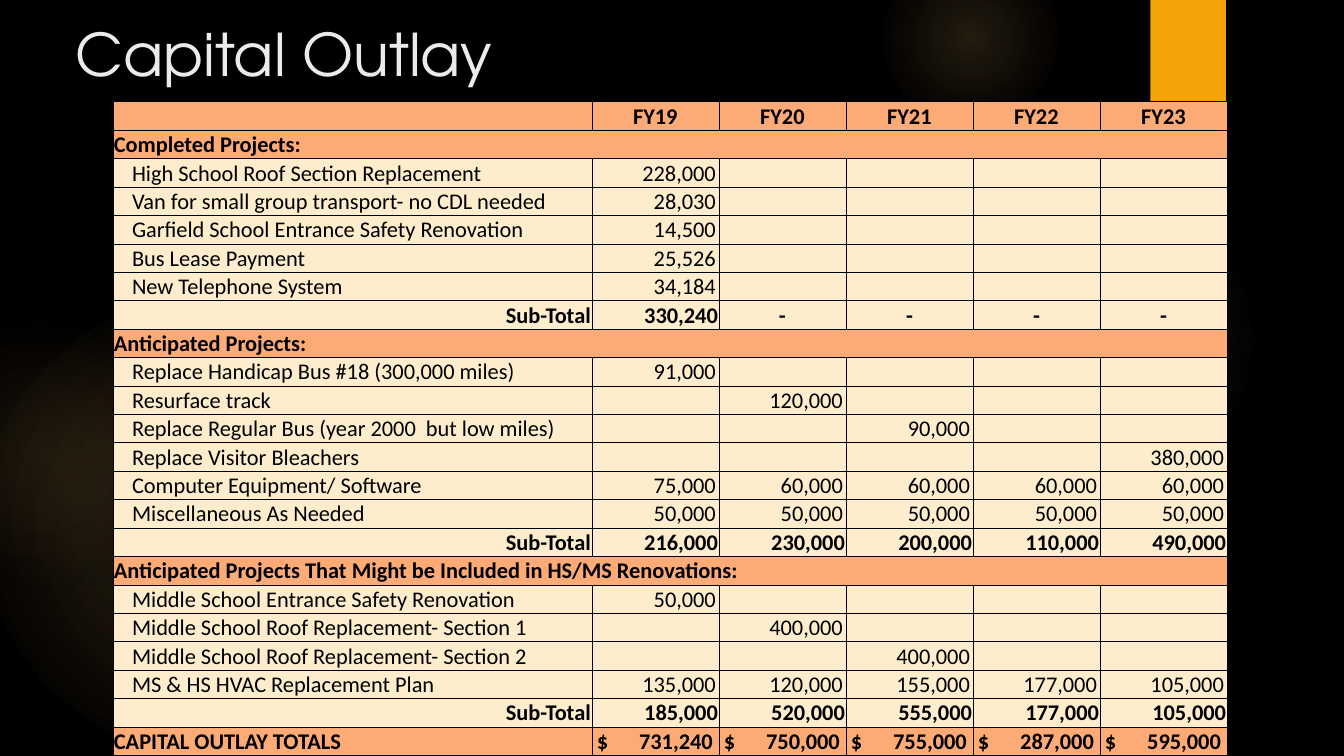
from lxml import etree
from pptx import Presentation
from pptx.dml.color import RGBColor
from pptx.enum.shapes import MSO_SHAPE
from pptx.enum.text import MSO_ANCHOR, PP_ALIGN
from pptx.oxml import parse_xml
from pptx.oxml.ns import nsdecls, qn
from pptx.util import Inches, Pt

OVAL, RECTANGLE = MSO_SHAPE.OVAL, MSO_SHAPE.RECTANGLE
LEFT, CENTER, RIGHT = PP_ALIGN.LEFT, PP_ALIGN.CENTER, PP_ALIGN.RIGHT
TOP, BOTTOM = MSO_ANCHOR.TOP, MSO_ANCHOR.BOTTOM

BLACK, ACCENT, TITLE_COLOR = "000000", "F5A408", "EBEBEB"
BAND, BODY = "FCAB76", "FDEDCD"
GLOW, WARM_GLOW = "FAC96A", "F59B74"
YEARS = ["FY19", "FY20", "FY21", "FY22", "FY23"]

GLOWS = [
    (-0.17, 2.92, 4.58, [(0, GLOW, 11), (36, GLOW, 10), (75, GLOW, 0)]),
    (-0.92, 3.17, 2.58, [(0, GLOW, 8), (36, GLOW, 5), (71, WARM_GLOW, 0)]),
    (9.41, 1.83, 3.08, [(0, GLOW, 7), (36, GLOW, 6), (69, GLOW, 0)]),
    (8.75, -0.5, 1.75, [(0, GLOW, 14), (36, GLOW, 7), (73, GLOW, 0)]),
    (9.41, 6.67, 1.08, [(0, GLOW, 10), (31, GLOW, 5), (66, GLOW, 0)]),
]

OUTLAY = [
    ("header", "", YEARS),
    ("section", "Completed Projects:", []),
    ("item", "High School Roof Section Replacement", ["228,000"]),
    ("item", "Van for small group transport- no CDL needed", ["28,030"]),
    ("item", "Garfield School Entrance Safety Renovation", ["14,500"]),
    ("item", "Bus Lease Payment", ["25,526"]),
    ("item", "New Telephone System", ["34,184"]),
    ("subtotal", "Sub-Total", ["330,240", "-", "-", "-", "-"]),
    ("section", "Anticipated Projects:", []),
    ("item", "Replace Handicap Bus #18 (300,000 miles)", ["91,000"]),
    ("item", "Resurface track", ["", "120,000"]),
    ("item", "Replace Regular Bus (year 2000  but low miles)", ["", "", "90,000"]),
    ("item", "Replace Visitor Bleachers", ["", "", "", "", "380,000"]),
    ("item", "Computer Equipment/ Software", ["75,000"] + ["60,000"] * 4),
    ("item", "Miscellaneous As Needed", ["50,000"] * 5),
    ("subtotal", "Sub-Total", ["216,000", "230,000", "200,000", "110,000", "490,000"]),
    ("section", "Anticipated Projects That Might be Included in HS/MS Renovations:", []),
    ("item", "Middle School Entrance Safety Renovation", ["50,000"]),
    ("item", "Middle School Roof Replacement- Section 1", ["", "400,000"]),
    ("item", "Middle School Roof Replacement- Section 2", ["", "", "400,000"]),
    ("item", "MS & HS HVAC Replacement Plan",
     ["135,000", "120,000", "155,000", "177,000", "105,000"]),
    ("subtotal", "Sub-Total", ["185,000", "520,000", "555,000", "177,000", "105,000"]),
    ("total", "CAPITAL OUTLAY TOTALS",
     ["731,240", "750,000", "755,000", "287,000", "595,000"]),
]


def rgb(color):
    """Turn a hex string into a colour."""
    return RGBColor.from_string(color)


def write(frame, text, font="Calibri", size=16, color=BLACK, bold=False, align=LEFT, tab=None):
    """Write one formatted paragraph into a text frame."""
    paragraph = frame.paragraphs[0]
    paragraph.alignment = align
    if tab is not None:
        properties = paragraph._p.get_or_add_pPr()
        stops = etree.SubElement(properties, qn("a:tabLst"))
        etree.SubElement(stops, qn("a:tab"), pos=str(Inches(tab)), algn="r")
    if not text:
        etree.SubElement(paragraph._p, qn("a:endParaRPr"), sz=str(size * 100))
        return
    run = paragraph.add_run()
    run.text = text
    run.font.name = font
    run.font.size = Pt(size)
    run.font.bold = bold
    run.font.color.rgb = rgb(color)


def add_glow(slide, left, top, diameter, stops):
    """Add a circle that fades out from its centre."""
    glow = slide.shapes.add_shape(
        OVAL, Inches(left), Inches(top), Inches(diameter), Inches(diameter))
    glow.shadow.inherit = False
    glow.line.fill.background()
    stop_xml = "".join(
        f'<a:gs pos="{position * 1000}"><a:srgbClr val="{color}">'
        f'<a:alpha val="{opacity * 1000}"/></a:srgbClr></a:gs>'
        for position, color, opacity in stops)
    gradient = parse_xml(
        f'<a:gradFill {nsdecls("a")}><a:gsLst>{stop_xml}</a:gsLst><a:path path="circle">'
        '<a:fillToRect l="50000" t="50000" r="50000" b="50000"/></a:path></a:gradFill>')
    glow._element.spPr.find(qn("a:prstGeom")).addnext(gradient)


def add_accent(slide):
    """Add the accent block at the upper edge."""
    accent = slide.shapes.add_shape(
        RECTANGLE, Inches(11.41), Inches(0), Inches(0.75), Inches(1.25))
    accent.shadow.inherit = False
    accent.fill.solid()
    accent.fill.fore_color.rgb = rgb(ACCENT)
    accent.line.fill.background()


def place_title(slide, text):
    """Move the title placeholder in front of the decoration and fill it."""
    title = slide.shapes.title
    slide.shapes._spTree.append(title._element)
    title.left, title.top = Inches(0.65), Inches(0.13)
    title.width, title.height = Inches(10.29), Inches(1)
    title.text_frame.vertical_anchor = TOP
    write(title.text_frame, text, font="TeX Gyre Adventor", size=42, color=TITLE_COLOR)


def style_cell(cell, fill, left=0.01, right=0.01):
    """Give a cell its borders, fill and insets."""
    properties = cell._tc.get_or_add_tcPr()
    for side in ("lnL", "lnR", "lnT", "lnB"):
        properties.append(parse_xml(
            f'<a:{side} {nsdecls("a")} w="{Pt(0.5)}"><a:solidFill>'
            f'<a:srgbClr val="{BLACK}"/></a:solidFill></a:{side}>'))
    cell.fill.solid()
    cell.fill.fore_color.rgb = rgb(fill)
    cell.vertical_anchor = BOTTOM
    cell.margin_left, cell.margin_right = Inches(left), Inches(right)
    cell.margin_top, cell.margin_bottom = Inches(0.01), Inches(0)


def fill_row(cells, kind, label, amounts):
    """Fill one table row according to its kind."""
    fill = BODY if kind in ("item", "subtotal") else BAND
    bold = kind != "item"
    style_cell(cells[0], fill, left=0.19 if fill == BODY else 0.01)
    write(cells[0].text_frame, label, bold=bold, align=RIGHT if kind == "subtotal" else LEFT)
    padded = amounts + [""] * (len(YEARS) - len(amounts))
    for cell, amount in zip(cells[1:], padded):
        if kind == "total":
            style_cell(cell, fill, left=0.05)
            write(cell.text_frame, f"$\t{amount}", bold=True, tab=1.15)
        else:
            style_cell(cell, fill, right=0.03 if kind == "item" else 0.01)
            centered = kind == "header" or amount == "-"
            write(cell.text_frame, amount, bold=bold, align=CENTER if centered else RIGHT)
    if kind == "section":
        cells[0].merge(cells[-1])


def add_outlay_table(slide):
    """Add the table of projects by fiscal year."""
    row_height = 0.27
    table = slide.shapes.add_table(
        len(OUTLAY), len(YEARS) + 1, Inches(1.12), Inches(1.01),
        Inches(11.05), Inches(row_height * len(OUTLAY))).table
    table.first_row = table.horz_banding = False
    for index, column in enumerate(table.columns):
        column.width = Inches(1.26 if index else 4.75)
    for row, (kind, label, amounts) in zip(table.rows, OUTLAY):
        row.height = Inches(row_height)
        fill_row(list(row.cells), kind, label, amounts)


def main():
    """Build the capital outlay slide."""
    presentation = Presentation()
    presentation.slide_width, presentation.slide_height = Inches(13.33), Inches(7.5)
    slide = presentation.slides.add_slide(presentation.slide_layouts[5])
    slide.background.fill.solid()
    slide.background.fill.fore_color.rgb = rgb(BLACK)
    for glow in GLOWS:
        add_glow(slide, *glow)
    add_accent(slide)
    place_title(slide, "Capital Outlay")
    add_outlay_table(slide)
    presentation.save("out.pptx")


if __name__ == "__main__":
    main()
